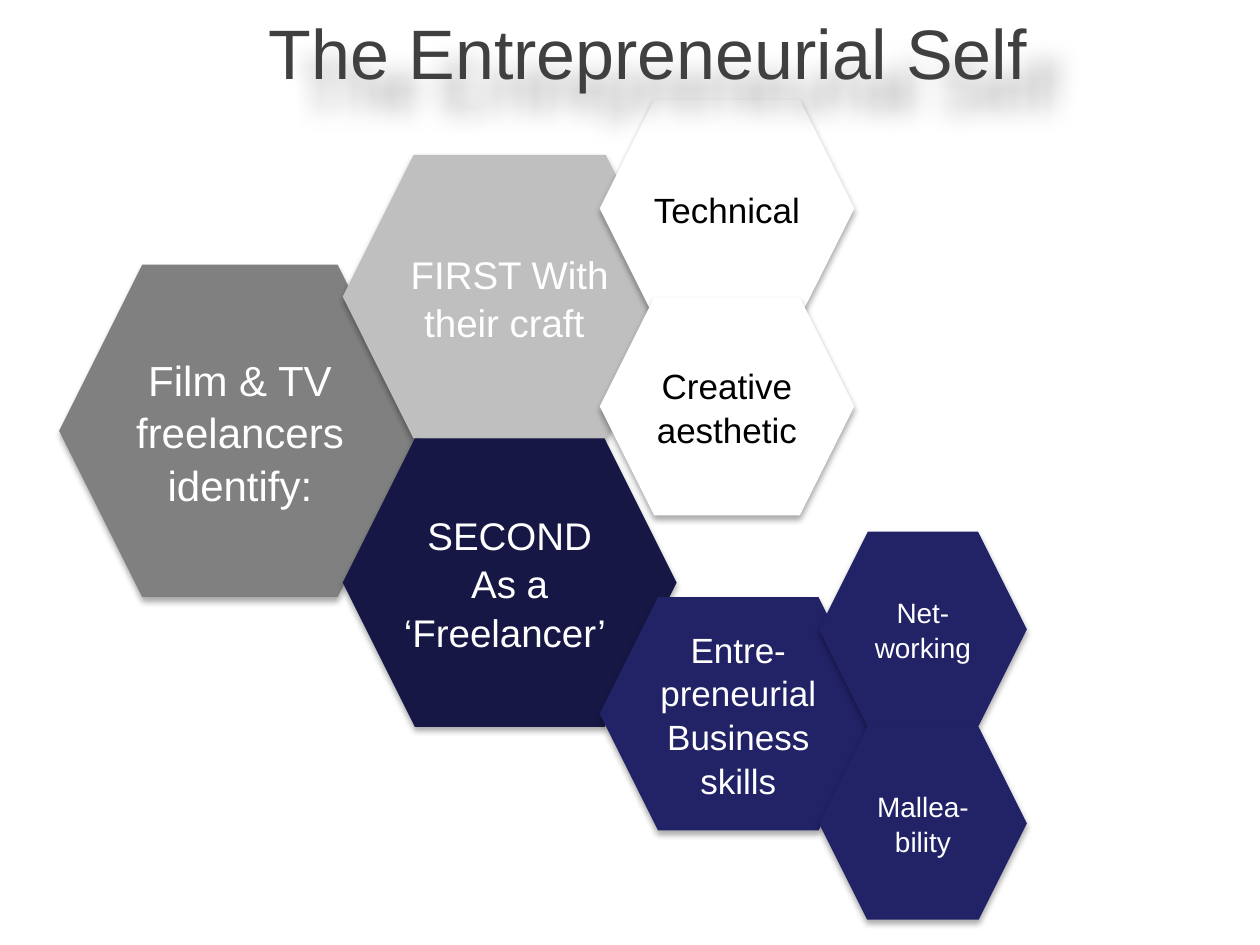
from dataclasses import dataclass

import lxml.etree
import pptx
import pptx.dml.color
import pptx.enum.shapes
import pptx.enum.text
import pptx.oxml.ns
import pptx.util

SHAPE = pptx.enum.shapes.MSO_SHAPE
WHITE, BLACK, GREY, SILVER = "FFFFFF", "000000", "808080", "BFBFBF"
NAVY, INDIGO, CHARCOAL = "171745", "222267", "404040"


@dataclass(frozen=True)
class Shadow:
    blur: float  # points
    distance: float  # points
    angle: int  # degrees
    opacity: int  # percent


@dataclass(frozen=True)
class Column:
    left: float  # percent of slide width
    width: float
    size: int  # text size in points


@dataclass(frozen=True)
class Tile:
    column: Column
    top: float  # percent of slide height
    height: float
    lines: tuple[str, ...]
    fill: str | None
    color: str = WHITE


TILE_SHADOW = Shadow(3.5, 2.2, 90, 32)
TITLE_SHADOW = Shadow(14, 25, 45, 35)

ROOT = Column(4.7, 28.7, 24)
ORDER = Column(27.2, 26.5, 22)
CRAFT = Column(47.6, 20.2, 20)
BUSINESS = Column(47.6, 22, 20)
TRAIT = Column(65, 16.5, 16)
HEADING = Column(15, 72.8, 40)

TILES = [
    Tile(ROOT, 28, 35.2, ("Film & TV freelancers", "identify:"), GREY),
    Tile(ORDER, 16.4, 30, ("FIRST With their craft ",), SILVER),
    Tile(ORDER, 46.4, 30.53, ("SECOND", "As a ‘Freelancer’ "), NAVY),
    Tile(CRAFT, 10.53, 23.07, ("Technical",), WHITE, BLACK),
    Tile(CRAFT, 31.47, 23.07, ("Creative aesthetic",), WHITE, BLACK),
    Tile(BUSINESS, 63.2, 24.67, ("Entre-preneurial", "Business skills"), INDIGO),
    Tile(TRAIT, 56.27, 20.67, ("Net-working",), INDIGO),
    Tile(TRAIT, 76.93, 20.4, ("Mallea-bility",), INDIGO),
]
TITLE = Tile(HEADING, 0, 10.53, ("The Entrepreneurial Self",), None, CHARCOAL)


def rgb(value: str) -> pptx.dml.color.RGBColor:
    return pptx.dml.color.RGBColor.from_string(value)


def add_shadow(sp, shadow: Shadow) -> None:
    sp.shadow.inherit = False
    qn = pptx.oxml.ns.qn
    effects = sp.element.spPr.find(qn("a:effectLst"))
    outer = lxml.etree.SubElement(
        effects, qn("a:outerShdw"),
        blurRad=str(int(pptx.util.Pt(shadow.blur))),
        dist=str(int(pptx.util.Pt(shadow.distance))),
        dir=str(shadow.angle * 60000), algn="ctr", rotWithShape="0")
    color = lxml.etree.SubElement(outer, qn("a:srgbClr"), val=BLACK)
    lxml.etree.SubElement(color, qn("a:alpha"), val=str(shadow.opacity * 1000))


def add_text(sp, tile: Tile) -> None:
    tf = sp.text_frame
    tf.word_wrap = True
    tf.vertical_anchor = pptx.enum.text.MSO_ANCHOR.MIDDLE
    tf.margin_left = tf.margin_right = pptx.util.Inches(0.05)
    tf.margin_top = tf.margin_bottom = 0
    for i, line in enumerate(tile.lines):
        p = tf.add_paragraph() if i else tf.paragraphs[0]
        p.alignment = pptx.enum.text.PP_ALIGN.CENTER
        p.line_spacing = 1.04
        r = p.add_run()
        r.text = line
        r.font.name = "Arial"
        r.font.size = pptx.util.Pt(tile.column.size)
        r.font.color.rgb = rgb(tile.color)


def add_tile(prs, s, tile: Tile, kind, shadow: Shadow) -> None:
    w, h = prs.slide_width / 100, prs.slide_height / 100
    sp = s.shapes.add_shape(
        kind, int(tile.column.left * w), int(tile.top * h),
        int(tile.column.width * w), int(tile.height * h))
    if tile.fill:
        sp.fill.solid()
        sp.fill.fore_color.rgb = rgb(tile.fill)
    else:
        sp.fill.background()
    sp.line.fill.background()
    add_shadow(sp, shadow)
    add_text(sp, tile)


def main() -> None:
    prs = pptx.Presentation()
    prs.slide_width = pptx.util.Inches(10)
    prs.slide_height = pptx.util.Inches(7.5)
    s = prs.slides.add_slide(prs.slide_layouts[6])
    for tile in TILES:
        add_tile(prs, s, tile, SHAPE.HEXAGON, TILE_SHADOW)
    add_tile(prs, s, TITLE, SHAPE.ROUNDED_RECTANGLE, TITLE_SHADOW)
    prs.save("out.pptx")


if __name__ == "__main__":
    main()
